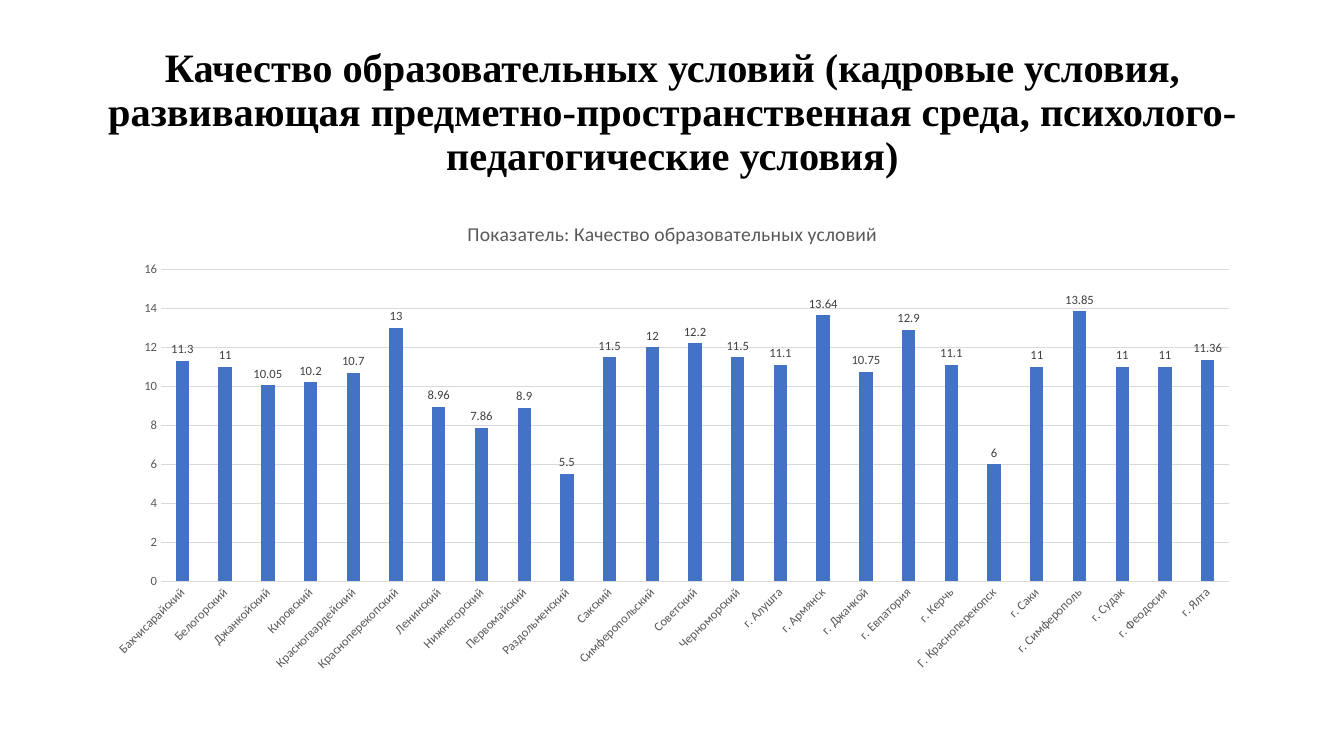
"""Build a slide with a column chart of educational conditions by district."""
from pptx import Presentation
from pptx.chart.data import CategoryChartData
from pptx.dml.color import RGBColor
from pptx.enum.chart import XL_CHART_TYPE, XL_LABEL_POSITION, XL_TICK_MARK
from pptx.enum.text import MSO_ANCHOR, MSO_AUTO_SIZE, PP_ALIGN
from pptx.util import Inches, Pt

COLUMNS = XL_CHART_TYPE.COLUMN_CLUSTERED
OUTSIDE_END = XL_LABEL_POSITION.OUTSIDE_END
NO_TICK = XL_TICK_MARK.NONE
MIDDLE = MSO_ANCHOR.MIDDLE
NO_AUTOFIT = MSO_AUTO_SIZE.NONE
CENTER = PP_ALIGN.CENTER

GRAY = "595959"
LIGHT_GRAY = "D9D9D9"
SCORES = {
    "Бахчисарайский": 11.3,
    "Белогорский": 11,
    "Джанкойский": 10.05,
    "Кировский": 10.2,
    "Красногвардейский": 10.7,
    "Красноперекопский": 13,
    "Ленинский": 8.96,
    "Нижнегорский": 7.86,
    "Первомайский": 8.9,
    "Раздольненский": 5.5,
    "Сакский": 11.5,
    "Симферопольский": 12,
    "Советский": 12.2,
    "Черноморский": 11.5,
    "г. Алушта": 11.1,
    "г. Армянск": 13.64,
    "г. Джанкой": 10.75,
    "г. Евпатория": 12.9,
    "г. Керчь": 11.1,
    "Г. Красноперекопск": 6,
    "г. Саки": 11,
    "г. Симферополь": 13.85,
    "г. Судак": 11,
    "г. Феодосия": 11,
    "г. Ялта": 11.36,
}


def rgb(value):
    return RGBColor.from_string(value)


def format_font(font, size, color, name="Calibri", bold=False):
    font.size = Pt(size)
    font.color.rgb = rgb(color)
    font.name = name
    font.bold = bold


presentation = Presentation()
presentation.slide_width = Inches(13.33)
presentation.slide_height = Inches(7.5)
slide = presentation.slides.add_slide(presentation.slide_layouts[5])

title = slide.shapes.title
title.left, title.top = Inches(0.92), Inches(0.4)
title.width, title.height = Inches(11.5), Inches(1.45)
title_frame = title.text_frame
title_frame.word_wrap = True
title_frame.auto_size = NO_AUTOFIT
title_frame.vertical_anchor = MIDDLE
paragraph = title_frame.paragraphs[0]
paragraph.alignment = CENTER
paragraph.line_spacing = 0.9
run = paragraph.add_run()
run.text = (
    "Качество образовательных условий (кадровые условия, развивающая "
    "предметно-пространственная среда, психолого-педагогические условия)"
)
format_font(run.font, 28.8, "000000", "Times New Roman", True)

chart_data = CategoryChartData()
chart_data.categories = list(SCORES)
chart_data.add_series("Качество образовательных условий", list(SCORES.values()))
chart = slide.shapes.add_chart(
    COLUMNS, Inches(0.92), Inches(2), Inches(11.5), Inches(4.76), chart_data
).chart
format_font(chart.font, 10, "000000")
chart.has_legend = False
chart.has_title = True
chart.chart_title.include_in_layout = False
heading = chart.chart_title.text_frame.paragraphs[0].add_run()
heading.text = "Показатель: Качество образовательных условий"
format_font(heading.font, 14, GRAY)

for axis in (chart.category_axis, chart.value_axis):
    axis.major_tick_mark = NO_TICK
    axis.minor_tick_mark = NO_TICK
    format_font(axis.tick_labels.font, 9, GRAY)

value_axis = chart.value_axis
value_axis.minimum_scale = 0
value_axis.maximum_scale = 16
value_axis.major_unit = 2
value_axis.has_major_gridlines = True
value_axis.format.line.fill.background()
for line in (chart.category_axis.format.line, value_axis.major_gridlines.format.line):
    line.color.rgb = rgb(LIGHT_GRAY)
    line.width = Pt(0.75)
category_text = chart.category_axis.tick_labels.font._element.getparent().getparent().getparent()
category_text.bodyPr.set("rot", "-2700000")

plot = chart.plots[0]
plot.gap_width = 219
plot.overlap = -27
plot.vary_by_categories = False
series = plot.series[0]
series.invert_if_negative = False
series.format.fill.solid()
series.format.fill.fore_color.rgb = rgb("4472C4")
labels = series.data_labels
labels.show_value = True
labels.position = OUTSIDE_END
format_font(labels.font, 9, "404040")

presentation.save("out.pptx")
